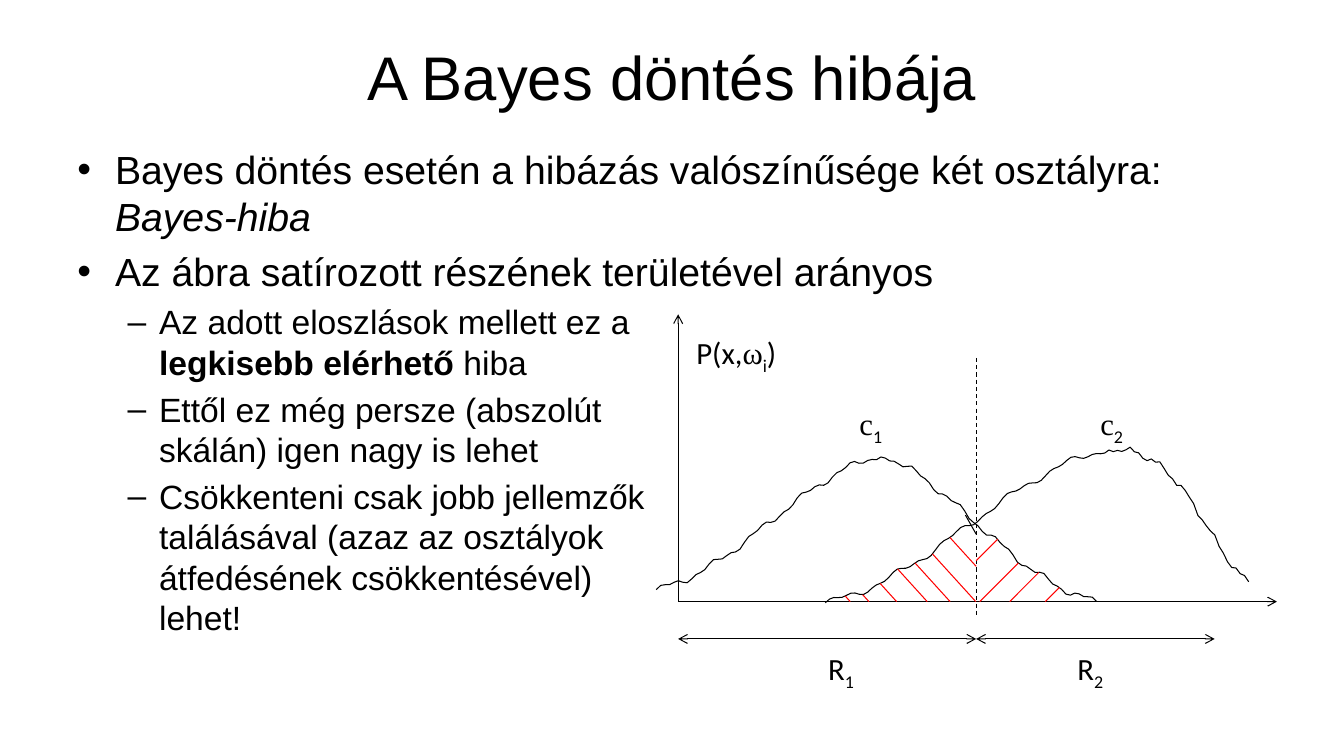
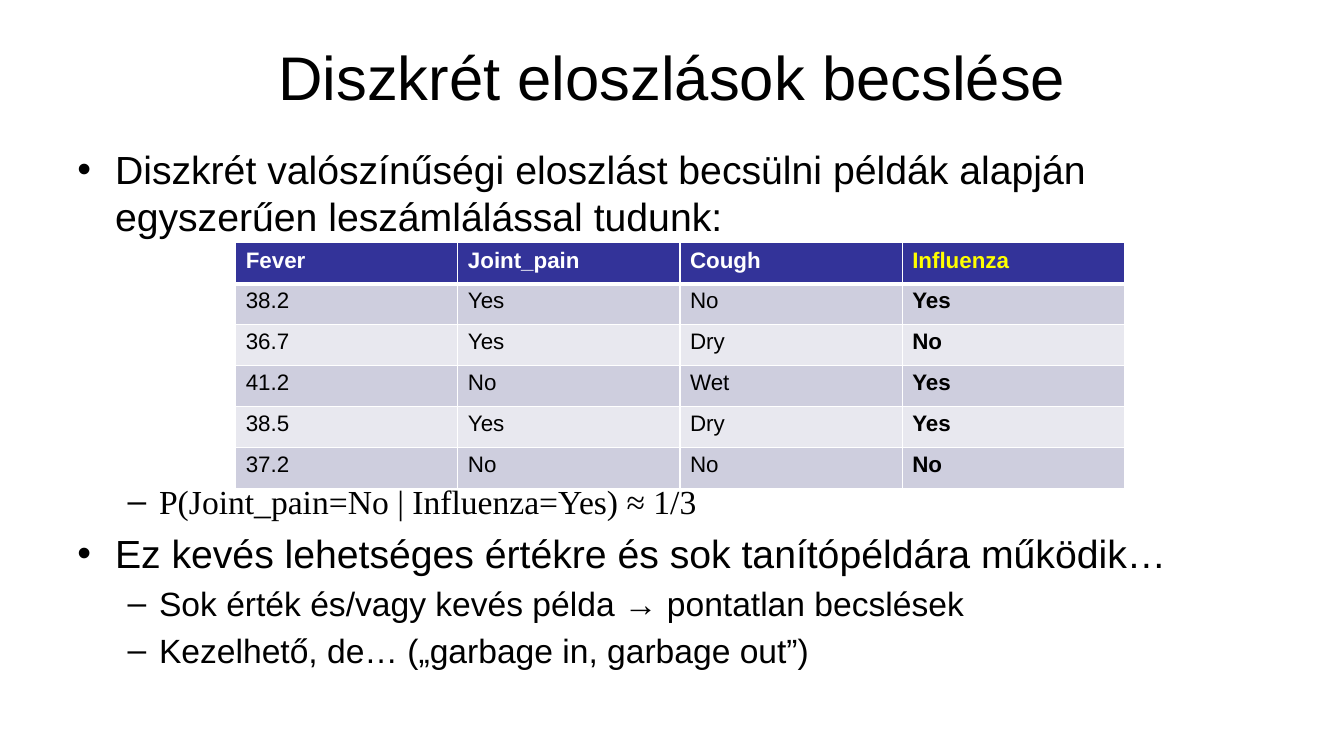
from math import cos, pi, sin

from lxml import etree
from pptx import Presentation
from pptx.dml.color import RGBColor
from pptx.enum.dml import MSO_LINE
from pptx.enum.shapes import MSO_CONNECTOR, MSO_SHAPE
from pptx.enum.text import MSO_ANCHOR, PP_ALIGN
from pptx.oxml.ns import qn
from pptx.util import Cm, Pt

color = RGBColor.from_string
BLACK, WHITE, RED = "000000", "FFFFFF", "FF0000"
NAVY, YELLOW = "333399", "FFFF00"
BANDS = ["CECEDE", "E8E8EF"]
SANS, SERIF, LABEL = "Arial", "Times New Roman", "Calibri"
THIN = Pt(0.75)
# Level: bullet, left margin, hanging indent, text size, space before
LEVELS = [("•", Cm(0.95), Cm(-0.95), 28, 6),
          ("–", Cm(2.06), Cm(-0.79), 24, 4.8)]
BOLD, ITALIC = "bold", "italic"

# Each entry: level, first text, then (text, style) pairs
PAGES = [
    ("A Bayes döntés hibája", [
        (0, "Bayes döntés esetén a hibázás valószínűsége két osztályra: ",
         ("Bayes-hiba", ITALIC)),
        (0, "Az ábra satírozott részének területével arányos"),
        (1, "Az adott eloszlások mellett ez a \v",
         ("legkisebb elérhető ", BOLD), ("hiba", None)),
        (1, "Ettől ez még persze (abszolút\vskálán) igen nagy is lehet"),
        (1, "Csökkenteni csak jobb jellemzők\vtalálásával (azaz az osztályok"
            "\vátfedésének csökkentésével) \vlehet!"),
    ]),
    ("Diszkrét eloszlások becslése", [
        (0, "Diszkrét valószínűségi eloszlást becsülni példák alapján "
            "egyszerűen leszámlálással tudunk:"),
        (1, "P(Joint_pain=No | Influenza=Yes) ≈ 1/3"),
        (0, "Ez kevés lehetséges értékre és sok tanítópéldára működik…"),
        (1, "Sok érték és/vagy kevés példa → pontatlan becslések"),
        (1, "Kezelhető, de… („garbage in, garbage out”)"),
    ]),
]

prs = Presentation()
prs.slide_width, prs.slide_height = Cm(33.87), Cm(19.05)
slides, bodies = [], []

# Title and bullet list of every slide
for head, items in PAGES:
    slide = prs.slides.add_slide(prs.slide_layouts[5])
    title = slide.shapes.title
    title.left, title.top = Cm(1.7), Cm(0.33)
    title.width, title.height = Cm(30.48), Cm(3.18)
    frame = title.text_frame
    frame.text = head
    frame.vertical_anchor = MSO_ANCHOR.MIDDLE
    par = frame.paragraphs[0]
    par.alignment = PP_ALIGN.CENTER
    par.font.name, par.font.size = SANS, Pt(44)
    par.font.color.rgb = color(BLACK)

    body = slide.shapes.add_textbox(Cm(1.7), Cm(3.53), Cm(28.83), Cm(12.57))
    frame = body.text_frame
    frame.word_wrap = True
    for i, (level, text, *extra) in enumerate(items):
        par = frame.add_paragraph() if i else frame.paragraphs[0]
        mark, left, hang, size, gap = LEVELS[level]
        par.text = text
        for more, style in extra:
            run = par.add_run()
            run.text = more
            run.font.bold = style == BOLD
            run.font.italic = style == ITALIC
        par.level = level
        if i:
            par.space_before = Pt(gap)
        props = par._p.get_or_add_pPr()
        props.set("marL", str(left))
        props.set("indent", str(hang))
        etree.SubElement(props, qn("a:buFont")).set("typeface", SANS)
        etree.SubElement(props, qn("a:buChar")).set("char", mark)
        for run in par.runs:
            run.font.name, run.font.size = SANS, Pt(size)
            run.font.color.rgb = color(BLACK)
    slides.append(slide)
    bodies.append(frame)

# Density figure, in cm: axes cross at (LEFT, BASE), classes part at SPLIT
shapes = slides[0].shapes
LEFT, RIGHT, TOP, BASE = 17.09, 32.18, 7.92, 15.16
SPLIT, REGION, SPAN = 24.6, 30.61, 16.1
# Hill: left foot, peak, right foot, skew of the right side
HILLS = [((16.54, 14.86), (22.25, 11.46), (27.64, 15.16), 0.9),
         ((20.8, 15.19), (27.99, 11.3), (31.47, 14.66), 1.6)]


def height(x, hill):
    """Return y on a hill: part cosine, part straight, with a hand's ripple."""
    start, peak, end, skew = hill
    foot, power = (start, 1) if x < peak[0] else (end, skew)
    t = min(1, (x - peak[0]) / (foot[0] - peak[0]))
    bend = t ** power
    fall = 0.6 * (1 - cos(pi * bend)) / 2 + 0.4 * bend
    ripple = 0.07 * sin(10 * pi * t) + 0.04 * sin(26 * pi * t)
    return peak[1] + (foot[1] - peak[1]) * fall + ripple


def link(x1, y1, x2, y2, tone=BLACK, ends=()):
    """Draw a thin straight line, in cm, with arrowheads at the named ends."""
    line = shapes.add_connector(MSO_CONNECTOR.STRAIGHT,
                                Cm(x1), Cm(y1), Cm(x2), Cm(y2))
    line.line.color.rgb = color(tone)
    line.line.width = THIN
    for end in ends:
        etree.SubElement(line.line._ln, qn("a:" + end)).set("type", "arrow")
    etree.SubElement(line._element.spPr, qn("a:effectLst"))
    return line


link(LEFT, BASE, RIGHT, BASE, ends=["tailEnd"])
link(LEFT, BASE, LEFT, TOP, ends=["tailEnd"])
link(24.33, 12.98, SPLIT, 13.46)

STEPS = 100
for hill in HILLS:
    first, last = hill[0][0], hill[2][0]
    xs = [first + (last - first) * i / STEPS for i in range(STEPS + 1)]
    points = [(Cm(x), Cm(height(x, hill))) for x in xs]
    pen = shapes.build_freeform(*points[0], scale=1.0)
    pen.add_line_segments(points[1:], close=False)
    curve = pen.convert_to_shape()
    curve.shadow.inherit = False
    curve.fill.background()
    curve.line.color.rgb = color(BLACK)
    curve.line.width = THIN

link(SPLIT, 9.02, SPLIT, 15.52).line.dash_style = MSO_LINE.DASH
for x1, x2 in [(LEFT, SPLIT), (SPLIT, REGION)]:
    link(x1, SPAN, x2, SPAN, ends=["headEnd", "tailEnd"])

# Hatching: strokes fall from the lower hill towards SPLIT, to BASE at most
# Side: lower hill, first x, step, count, slope
SIDES = [(HILLS[1], 21.3, 0.44, 7, 1.1),
         (HILLS[0], 26.7, -0.52, 4, -1)]
for hill, first, step, count, slope in SIDES:
    for i in range(count):
        x = first + i * step
        y = height(x, hill)
        drop = min(BASE - y, (SPLIT - x) * slope)
        link(x, y, x + drop / slope, y + drop, tone=RED)

# Labels: left, top, width, height, then (text, font); no font: subscript
REGION_BOX, CLASS_BOX = (2.16, 1.45), (1.6, 1.09)
LABELS = [
    (20.62, 16.26, *REGION_BOX, [("R", LABEL), ("1", None)]),
    (26.9, 16.26, *REGION_BOX, [("R", LABEL), ("2", None)]),
    (17.3, 8.28, 3.33, 1.09,
     [("P(x,", LABEL), ("ω", SERIF), ("i", None), (")", LABEL)]),
    (21.41, 10.08, *CLASS_BOX, [("c", SERIF), ("1", None)]),
    (27.48, 10.08, *CLASS_BOX, [("c", SERIF), ("2", None)]),
]
for x, y, wide, high, parts in LABELS:
    box = shapes.add_shape(MSO_SHAPE.RECTANGLE, Cm(x), Cm(y), Cm(wide), Cm(high))
    box.shadow.inherit = False
    box.fill.solid()
    box.fill.fore_color.rgb = color(WHITE)
    box.line.fill.background()
    frame = box.text_frame
    frame.vertical_anchor = MSO_ANCHOR.TOP
    par = frame.paragraphs[0]
    par.alignment = PP_ALIGN.LEFT
    for text, face in parts:
        run = par.add_run()
        run.text = text
        run.font.name, run.font.size = face or LABEL, Pt(22)
        run.font.color.rgb = color(BLACK)
        if face is None:
            run.font._element.set("baseline", "-25000")

# Example table, with room left for it above the formula
formula = bodies[1].paragraphs[1]
formula.space_before = Pt(172.5)
formula.runs[0].font.name = SERIF

ROWS = [
    ["Fever", "Joint_pain", "Cough", "Influenza"],
    ["38.2", "Yes", "No", "Yes"],
    ["36.7", "Yes", "Dry", "No"],
    ["41.2", "No", "Wet", "Yes"],
    ["38.5", "Yes", "Dry", "Yes"],
    ["37.2", "No", "No", "No"],
]
table = slides[1].shapes.add_table(len(ROWS), len(ROWS[0]), Cm(5.94), Cm(6.12),
                                   Cm(22.4), Cm(6.18)).table
for r, row in enumerate(ROWS):
    for c, text in enumerate(row):
        cell = table.cell(r, c)
        cell.text = text
        cell.fill.solid()
        cell.fill.fore_color.rgb = color(BANDS[(r - 1) % 2] if r else NAVY)
        last = c == len(row) - 1
        tone = BLACK if r else YELLOW if last else WHITE
        font = cell.text_frame.paragraphs[0].runs[0].font
        font.name, font.size = SANS, Pt(16)
        font.bold = r == 0 or last
        font.color.rgb = color(tone)
        if r == 0:  # thick rule under the header
            rule = etree.Element(qn("a:lnB"), w=str(Pt(3)))
            fill = etree.SubElement(rule, qn("a:solidFill"))
            etree.SubElement(fill, qn("a:srgbClr")).set("val", WHITE)
            cell._tc.get_or_add_tcPr().insert(0, rule)

prs.save("out.pptx")
